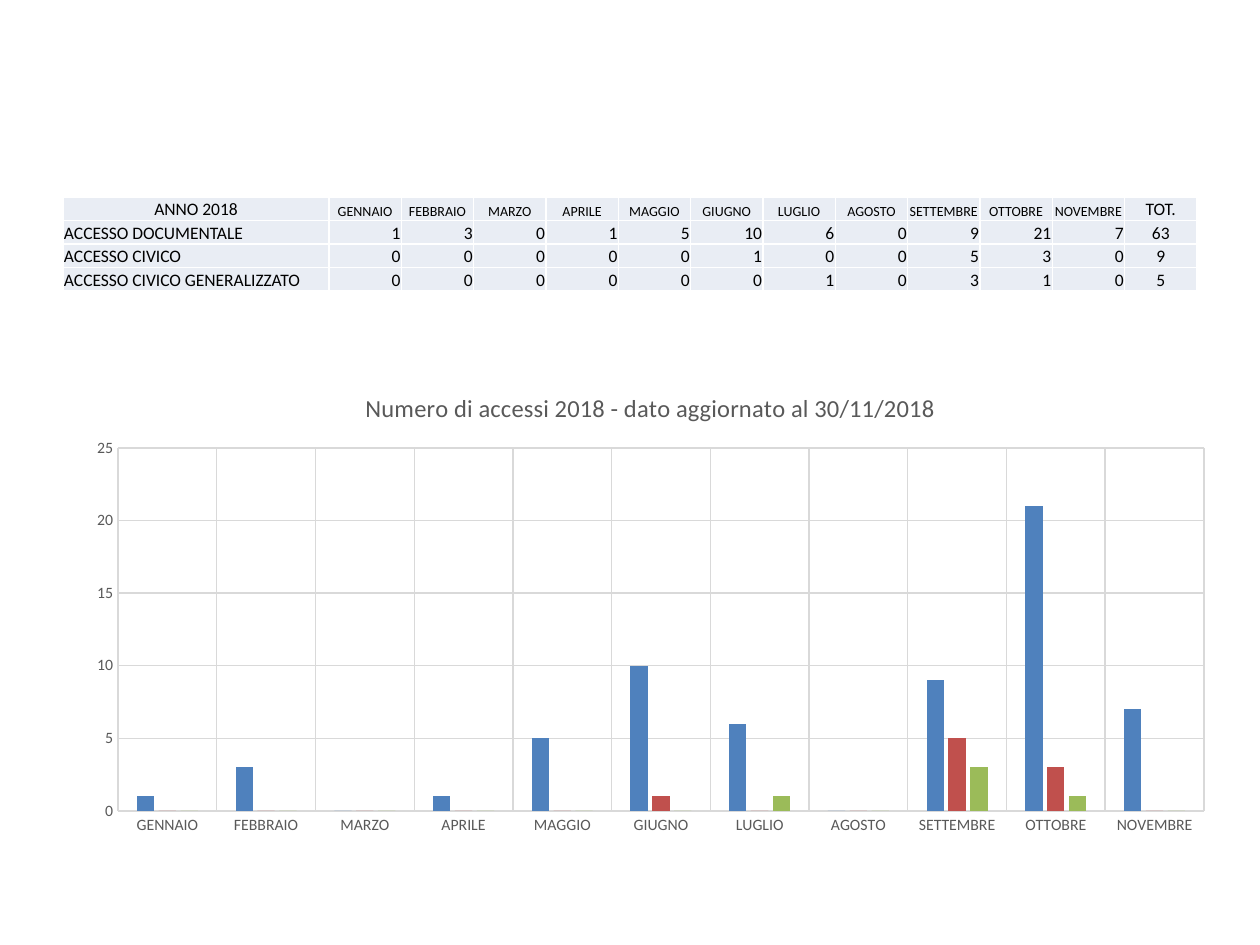
from dataclasses import dataclass

from lxml.etree import Element, SubElement
from pptx import Presentation
from pptx.chart.chart import Chart
from pptx.chart.data import CategoryChartData
from pptx.dml.color import RGBColor
from pptx.dml.line import LineFormat
from pptx.enum.chart import XL_CHART_TYPE, XL_TICK_MARK
from pptx.enum.text import MSO_ANCHOR, PP_ALIGN
from pptx.oxml.ns import qn
from pptx.slide import Slide
from pptx.table import _Cell
from pptx.text.text import Font
from pptx.util import Pt

PIXEL = 914400 // 126


@dataclass(frozen=True)
class Theme:
    font: str = "Calibri"
    text: str = "000000"
    muted: str = "595959"
    grid: str = "D9D9D9"
    cell: str = "E9EDF4"
    border: str = "FFFFFF"
    body_size: int = 10
    month_size: int = 8
    axis_size: int = 9
    title_size: int = 14


@dataclass(frozen=True)
class AccessType:
    name: str
    counts: tuple[int, ...]
    color: str


@dataclass(frozen=True)
class Box:
    left: int
    top: int
    width: int
    height: int

    def emu(self) -> tuple[int, int, int, int]:
        return tuple(value * PIXEL for value in (self.left, self.top, self.width, self.height))


THEME = Theme()
MONTHS = ("GENNAIO", "FEBBRAIO", "MARZO", "APRILE", "MAGGIO", "GIUGNO",
          "LUGLIO", "AGOSTO", "SETTEMBRE", "OTTOBRE", "NOVEMBRE")
ACCESS_TYPES = (
    AccessType("ACCESSO DOCUMENTALE", (1, 3, 0, 1, 5, 10, 6, 0, 9, 21, 7), "4F81BD"),
    AccessType("ACCESSO CIVICO", (0, 0, 0, 0, 0, 1, 0, 0, 5, 3, 0), "C0504D"),
    AccessType("ACCESSO CIVICO GENERALIZZATO", (0, 0, 0, 0, 0, 0, 1, 0, 3, 1, 0), "9BBB59"),
)
TABLE_BOX = Box(63, 197, 1134, 94)
LABEL_WIDTH = 266
CHART_BOX = Box(74, 370, 1153, 474)
PLOT_BOX = Box(118, 448, 1086, 363)
CHART_TITLE = "Numero di accessi 2018 - dato aggiornato al 30/11/2018"


def style_font(font: Font, size: int, color: str) -> None:
    font.name = THEME.font
    font.size = Pt(size)
    font.bold = False
    font.color.rgb = RGBColor.from_string(color)


def style_line(line: LineFormat) -> None:
    line.color.rgb = RGBColor.from_string(THEME.grid)
    line.width = Pt(0.75)


def add_borders(cell: _Cell) -> None:
    properties = cell._tc.get_or_add_tcPr()
    for position, side in enumerate(("lnL", "lnR", "lnT", "lnB")):
        border = Element(qn(f"a:{side}"), w=str(Pt(1)))
        fill = SubElement(border, qn("a:solidFill"))
        SubElement(fill, qn("a:srgbClr"), val=THEME.border)
        properties.insert(position, border)


def fill_cell(cell: _Cell, text: str, alignment: PP_ALIGN, size: int) -> None:
    cell.margin_left = cell.margin_right = cell.margin_top = PIXEL
    cell.margin_bottom = 0
    cell.vertical_anchor = MSO_ANCHOR.BOTTOM
    cell.fill.solid()
    cell.fill.fore_color.rgb = RGBColor.from_string(THEME.cell)
    add_borders(cell)
    paragraph = cell.text_frame.paragraphs[0]
    paragraph.text = text
    paragraph.alignment = alignment
    style_font(paragraph.font, size, THEME.text)


def add_access_table(slide: Slide) -> None:
    rows = [("ANNO 2018", *MONTHS, "TOT.")]
    rows += [(kind.name, *map(str, kind.counts), str(sum(kind.counts))) for kind in ACCESS_TYPES]
    last = len(rows[0]) - 1
    table = slide.shapes.add_table(len(rows), last + 1, *TABLE_BOX.emu()).table
    table.first_row = table.horz_banding = False

    # The label column is wide; the others share the rest
    for index, column in enumerate(table.columns):
        column.width = (LABEL_WIDTH * PIXEL if index == 0
                        else (TABLE_BOX.width - LABEL_WIDTH) * PIXEL // last)

    for row_index, row in enumerate(rows):
        for column_index, text in enumerate(row):
            is_month = 0 < column_index < last
            if row_index == 0 or column_index == last:
                alignment = PP_ALIGN.CENTER
            else:
                alignment = PP_ALIGN.RIGHT if is_month else PP_ALIGN.LEFT
            size = THEME.month_size if row_index == 0 and is_month else THEME.body_size
            fill_cell(table.cell(row_index, column_index), text, alignment, size)


def place_plot(chart: Chart) -> None:
    plot_area = chart.element.find(f".//{qn('c:plotArea')}")
    for old_layout in plot_area.findall(qn("c:layout")):
        plot_area.remove(old_layout)
    layout = Element(qn("c:layout"))
    manual = SubElement(layout, qn("c:manualLayout"))
    settings = {
        "layoutTarget": "inner", "xMode": "edge", "yMode": "edge",
        "x": (PLOT_BOX.left - CHART_BOX.left) / CHART_BOX.width,
        "y": (PLOT_BOX.top - CHART_BOX.top) / CHART_BOX.height,
        "w": PLOT_BOX.width / CHART_BOX.width,
        "h": PLOT_BOX.height / CHART_BOX.height,
    }
    for name, value in settings.items():
        SubElement(manual, qn(f"c:{name}"), val=str(value))
    plot_area.insert(0, layout)


def add_access_chart(slide: Slide) -> None:
    data = CategoryChartData()
    data.categories = MONTHS
    for kind in ACCESS_TYPES:
        data.add_series(kind.name, kind.counts)
    chart = slide.shapes.add_chart(XL_CHART_TYPE.COLUMN_CLUSTERED, *CHART_BOX.emu(), data).chart
    chart.has_legend = False
    style_font(chart.font, THEME.body_size, THEME.text)

    # Title
    chart.has_title = True
    paragraph = chart.chart_title.text_frame.paragraphs[0]
    paragraph.text = CHART_TITLE
    style_font(paragraph.font, THEME.title_size, THEME.muted)
    chart.chart_title.include_in_layout = False

    # Columns
    plot = chart.plots[0]
    plot.gap_width = 219
    plot.overlap = -27
    plot.vary_by_categories = False
    for series, kind in zip(plot.series, ACCESS_TYPES):
        series.format.fill.solid()
        series.format.fill.fore_color.rgb = RGBColor.from_string(kind.color)

    # Axes
    for axis in (chart.category_axis, chart.value_axis):
        axis.major_tick_mark = axis.minor_tick_mark = XL_TICK_MARK.NONE
        axis.has_major_gridlines = True
        style_line(axis.major_gridlines.format.line)
        style_font(axis.tick_labels.font, THEME.axis_size, THEME.muted)
    style_line(chart.category_axis.format.line)
    chart.value_axis.format.line.fill.background()
    chart.value_axis.minimum_scale = 0
    chart.value_axis.maximum_scale = 25
    chart.value_axis.major_unit = 5
    place_plot(chart)


def main() -> None:
    presentation = Presentation()
    presentation.slide_width = 1260 * PIXEL
    presentation.slide_height = 945 * PIXEL
    slide = presentation.slides.add_slide(presentation.slide_layouts[6])
    add_access_chart(slide)
    add_access_table(slide)
    presentation.save("out.pptx")


if __name__ == "__main__":
    main()
